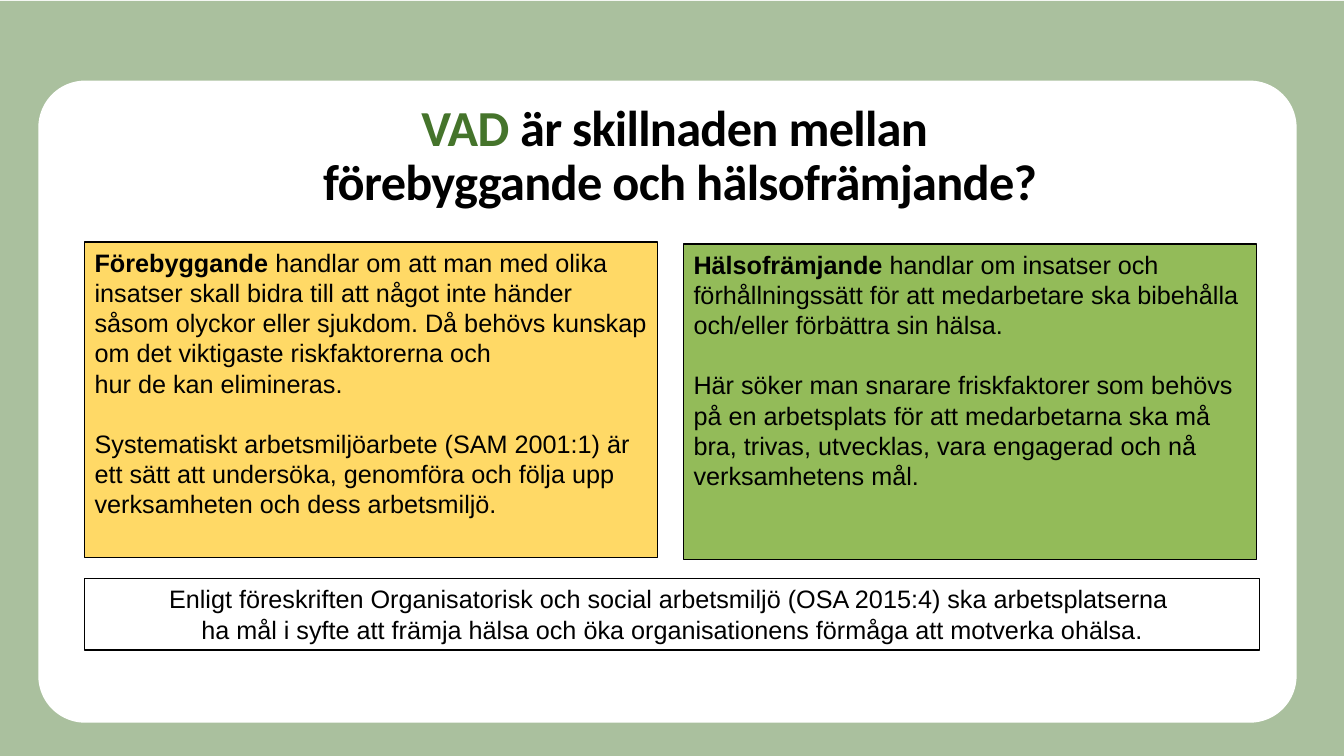
import pptx
import pptx.util
import pptx.dml.color
import pptx.enum.shapes
import pptx.enum.text
import pptx.oxml.ns
import lxml.etree

WIDTH, HEIGHT = 13.33, 7.5
LEFT_COLUMN, RIGHT_COLUMN = 0.84, 6.78
COLUMN_WIDTH, COLUMN_HEIGHT = 5.68, 3.13
BODY_SIZE = 18
BLANK_LINE = 21.5

COLORS = {
    "backdrop": "44752A",
    "accent": "45742B",
    "panel": "FFFFFF",
    "text": "000000",
    "preventive": "FFD966",
    "promoting": "93BB59",
}
SHAPES = pptx.enum.shapes.MSO_SHAPE
ALIGN = pptx.enum.text.PP_ALIGN


def color(name):
    return pptx.dml.color.RGBColor.from_string(COLORS[name])


def inches(*lengths):
    return [pptx.util.Inches(length) for length in lengths]


def add_box(slide, kind, place, fill=None, outlined=False):
    shape = slide.shapes.add_shape(kind, *inches(*place))
    shape.shadow.inherit = False
    if fill:
        shape.fill.solid()
        shape.fill.fore_color.rgb = color(fill)
    else:
        shape.fill.background()
    if outlined:
        shape.line.color.rgb = color("text")
        shape.line.width = pptx.util.Pt(1)
    else:
        shape.line.fill.background()
    return shape


def set_opacity(shape, percent):
    fill_color = shape.fill._xPr.find(".//" + pptx.oxml.ns.qn("a:srgbClr"))
    alpha = lxml.etree.SubElement(fill_color, pptx.oxml.ns.qn("a:alpha"))
    alpha.set("val", str(percent * 1000))


def add_run(paragraph, text, size, font, bold=False, ink="text"):
    run = paragraph.add_run()
    run.text = text
    run.font.size = pptx.util.Pt(size)
    run.font.name = font
    run.font.bold = bold
    run.font.color.rgb = color(ink)
    return run


def write_paragraphs(shape, paragraphs, align):
    """Each paragraph is (space before, [(text, bold), ...])."""
    frame = shape.text_frame
    frame.word_wrap = True
    frame.vertical_anchor = pptx.enum.text.MSO_ANCHOR.TOP
    for index, (space, runs) in enumerate(paragraphs):
        paragraph = frame.add_paragraph() if index else frame.paragraphs[0]
        paragraph.alignment = align
        if space:
            paragraph.space_before = pptx.util.Pt(space)
        for text, bold in runs:
            add_run(paragraph, text, BODY_SIZE, "Arial", bold)


def add_title(slide, lines):
    box = slide.shapes.add_textbox(*inches(0.38, 0.97, 12.73, 1.45))
    frame = box.text_frame
    frame.word_wrap = True
    for index, runs in enumerate(lines):
        paragraph = frame.add_paragraph() if index else frame.paragraphs[0]
        paragraph.alignment = ALIGN.CENTER
        paragraph.line_spacing = 0.9
        for text, ink in runs:
            run = add_run(paragraph, text, 36, "Calibri", True, ink)
            run.font._element.set("spc", "-50")


def main():
    presentation = pptx.Presentation()
    presentation.slide_width, presentation.slide_height = inches(WIDTH, HEIGHT)
    slide = presentation.slides.add_slide(presentation.slide_layouts[6])

    # Tinted backdrop and rounded white panel
    backdrop = add_box(slide, SHAPES.RECTANGLE, (0, 0.01, WIDTH, HEIGHT - 0.01), "backdrop")
    set_opacity(backdrop, 45)
    panel = add_box(slide, SHAPES.ROUNDED_RECTANGLE, (0.38, 0.8, 12.48, 6.37), "panel")
    panel.adjustments[0] = 0.073

    # Title
    add_title(slide, [
        [("VAD", "accent"), (" är skillnaden mellan ", "text")],
        [("förebyggande och hälsofrämjande?", "text")],
    ])

    # Two definitions side by side
    promoting = add_box(slide, SHAPES.RECTANGLE,
                        (RIGHT_COLUMN, 2.42, COLUMN_WIDTH, COLUMN_HEIGHT), "promoting", True)
    write_paragraphs(promoting, [
        (0, [("Hälsofrämjande ", True),
             ("handlar om insatser och förhållningssätt för att medarbetare ska "
              "bibehålla och/eller förbättra sin hälsa.", False)]),
        (BLANK_LINE, [("Här söker man snarare friskfaktorer som behövs på en arbetsplats "
                       "för att medarbetarna ska må bra, trivas, utvecklas, vara engagerad "
                       "och nå verksamhetens mål.", False)]),
    ], ALIGN.LEFT)

    preventive = add_box(slide, SHAPES.RECTANGLE,
                         (LEFT_COLUMN, 2.4, COLUMN_WIDTH, COLUMN_HEIGHT), "preventive", True)
    write_paragraphs(preventive, [
        (0, [("Förebyggande", True),
             (" handlar om att man med olika insatser skall bidra till att något "
              "inte händer", False)]),
        (0, [("såsom olyckor eller sjukdom. Då behövs kunskap om det viktigaste "
              "riskfaktorerna och", False)]),
        (0, [("hur de kan elimineras.", False)]),
        (BLANK_LINE, [("Systematiskt arbetsmiljöarbete (SAM 2001:1) är ett sätt att "
                       "undersöka, genomföra och följa upp verksamheten och dess "
                       "arbetsmiljö.", False)]),
    ], ALIGN.LEFT)

    # Regulation note across both columns
    note = add_box(slide, SHAPES.RECTANGLE, (LEFT_COLUMN, 5.74, 11.65, 0.71), outlined=True)
    write_paragraphs(note, [
        (0, [("Enligt föreskriften Organisatorisk och social arbetsmiljö (OSA 2015:4) "
              "ska arbetsplatserna ", False)]),
        (0, [("ha mål i syfte att främja hälsa och öka organisationens förmåga att "
              "motverka ohälsa.", False)]),
    ], ALIGN.CENTER)

    presentation.save("out.pptx")


if __name__ == "__main__":
    main()
